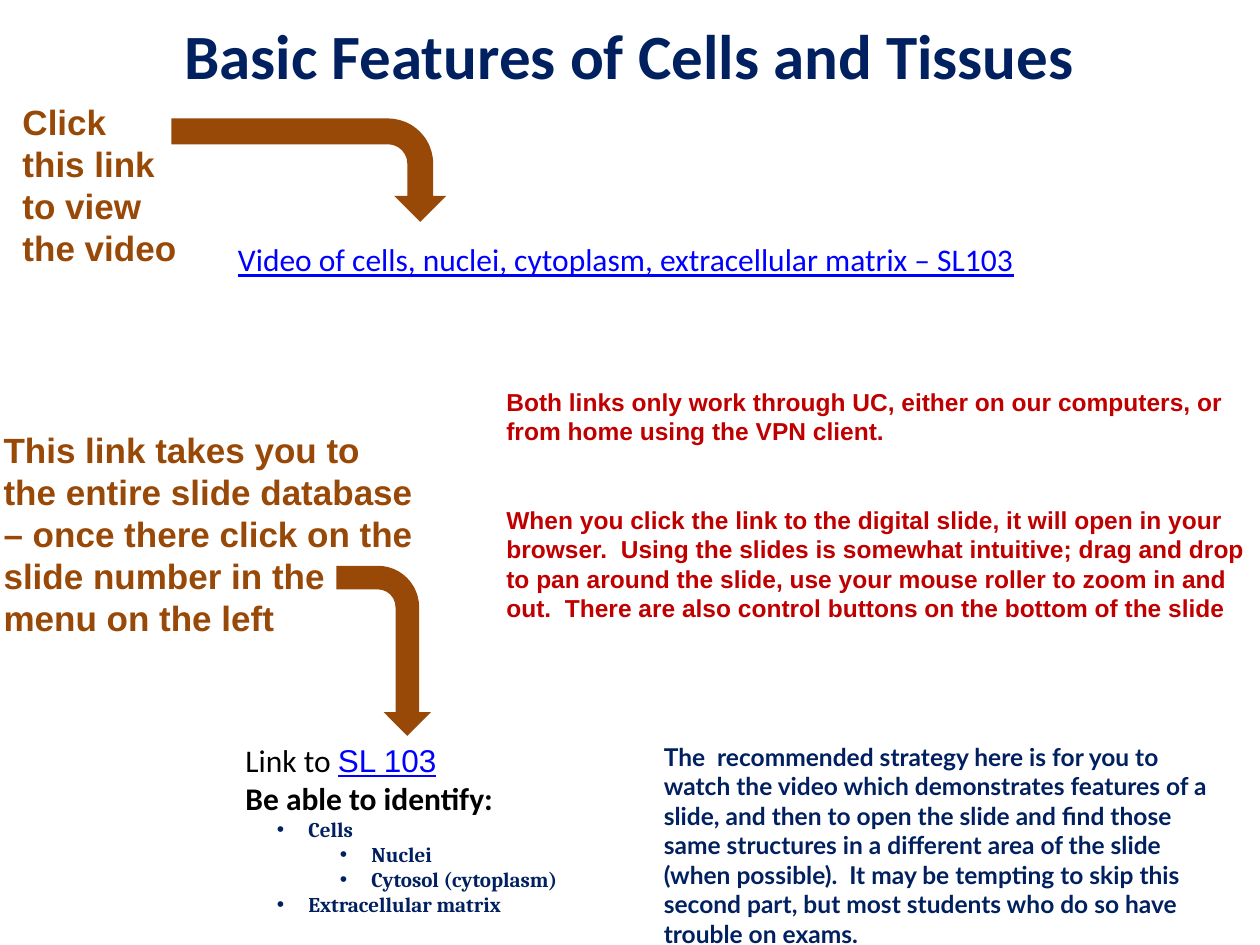
from lxml import etree
from pptx import Presentation
from pptx.dml.color import RGBColor
from pptx.enum.shapes import MSO_SHAPE as Shape
from pptx.enum.text import MSO_AUTO_SIZE as AutoSize, PP_ALIGN as Align
from pptx.oxml.ns import qn
from pptx.util import Inches, Pt

NAVY, BROWN, RED, BLUE, BLACK = "002060", "984807", "C00000", "0000FF", "000000"

TITLE = "Basic Features of Cells and Tissues"
VIDEO_LINK = "Video of cells, nuclei, cytoplasm, extracellular matrix – SL103"
VIDEO_HINT = "Click this link to view the video"
DATABASE_HINT = (
    "This link takes you to the entire slide database – once there click on "
    "the slide number in the menu on the left"
)
ACCESS_NOTES = [
    "Both links only work through UC, either on our computers, or from home "
    "using the VPN client.",
    "When you click the link to the digital slide, it will open in your browser.  "
    "Using the slides is somewhat intuitive; drag and drop to pan around the slide, "
    "use your mouse roller to zoom in and out.  There are also control buttons on "
    "the bottom of the slide",
]
STRATEGY = (
    "The  recommended strategy here is for you to watch the video which demonstrates "
    "features of a slide, and then to open the slide and find those same structures "
    "in a different area of the slide (when possible).  It may be tempting to skip "
    "this second part, but most students who do so have trouble on exams."
)
STRUCTURES = [
    ("Cells", 1),
    ("Nuclei", 2),
    ("Cytosol (cytoplasm)", 2),
    ("Extracellular matrix", 1),
]
ARROWS = [(2.04, 0.26, 0.82, 2.18), (2.37, 4.79, 1.35, 0.75)]


def color(value):
    return RGBColor.from_string(value)


def add_box(page, place, wrap=True):
    box = page.shapes.add_textbox(*map(Inches, place))
    box.text_frame.word_wrap = wrap
    box.text_frame.auto_size = AutoSize.SHAPE_TO_FIT_TEXT
    return box.text_frame


def next_para(frame):
    first = frame.paragraphs[0]
    return first if not first.runs else frame.add_paragraph()


def add_span(para, text, size=18, font="Calibri", fill=BLACK, bold=False, underline=False):
    span = para.add_run()
    span.text = text
    span.font.size = Pt(size)
    span.font.name = font
    span.font.color.rgb = color(fill)
    span.font.bold = bold
    span.font.underline = underline


def add_bullet(para, level):
    para.level = level
    props = para._p.get_or_add_pPr()
    props.set("marL", str(Inches(0.5 * level)))
    props.set("indent", str(-Inches(0.25)))
    etree.SubElement(props, qn("a:buFont"), typeface="Arial")
    etree.SubElement(props, qn("a:buChar"), char="•")


def add_arrow(page, place):
    arrow = page.shapes.add_shape(Shape.BENT_ARROW, *map(Inches, place))
    arrow.rotation = 90
    arrow.shadow.inherit = False
    arrow.fill.solid()
    arrow.fill.fore_color.rgb = color(BROWN)
    arrow.line.fill.background()


def main():
    deck = Presentation()
    deck.slide_width, deck.slide_height = Inches(10), Inches(7.5)
    page = deck.slides.add_slide(deck.slide_layouts[6])

    tasks = add_box(page, (1.85, 5.83, 3.74, 1.51))
    para = next_para(tasks)
    add_span(para, "Link to ")
    add_span(para, "SL 103", font="Arial", fill=BLUE, underline=True)
    add_span(next_para(tasks), "Be able to identify:", bold=True)
    for name, level in STRUCTURES:
        para = next_para(tasks)
        add_bullet(para, level)
        add_span(para, name, size=12, font="Cambria", fill=NAVY, bold=True)

    video = add_box(page, (1.79, 1.86, 6.62, 0.4))
    add_span(next_para(video), VIDEO_LINK, fill=BLUE, underline=True)

    para = next_para(add_box(page, (1.27, 0.08, 7.45, 0.71), wrap=False))
    para.alignment = Align.CENTER
    add_span(para, TITLE, size=36, fill=NAVY, bold=True)

    hints = [
        (VIDEO_HINT, (0.08, 0.75, 1.42, 1.78)),
        (DATABASE_HINT, (-0.07, 3.35, 3.49, 1.78)),
    ]
    for (text, place), arrow_place in zip(hints, ARROWS):
        para = next_para(add_box(page, place))
        add_span(para, text, size=20, font="Arial", fill=BROWN, bold=True)
        add_arrow(page, arrow_place)

    notes = add_box(page, (3.92, 3.02, 6.08, 1.99))
    for text in ACCESS_NOTES:
        para = next_para(notes)
        add_span(para, text, size=14, font="Arial", fill=RED, bold=True)
    para.space_before = Pt(34)

    strategy = add_box(page, (5.17, 5.84, 4.67, 1.51))
    add_span(next_para(strategy), STRATEGY, size=14, font="Lato", fill=NAVY, bold=True)

    deck.save("out.pptx")


if __name__ == "__main__":
    main()
